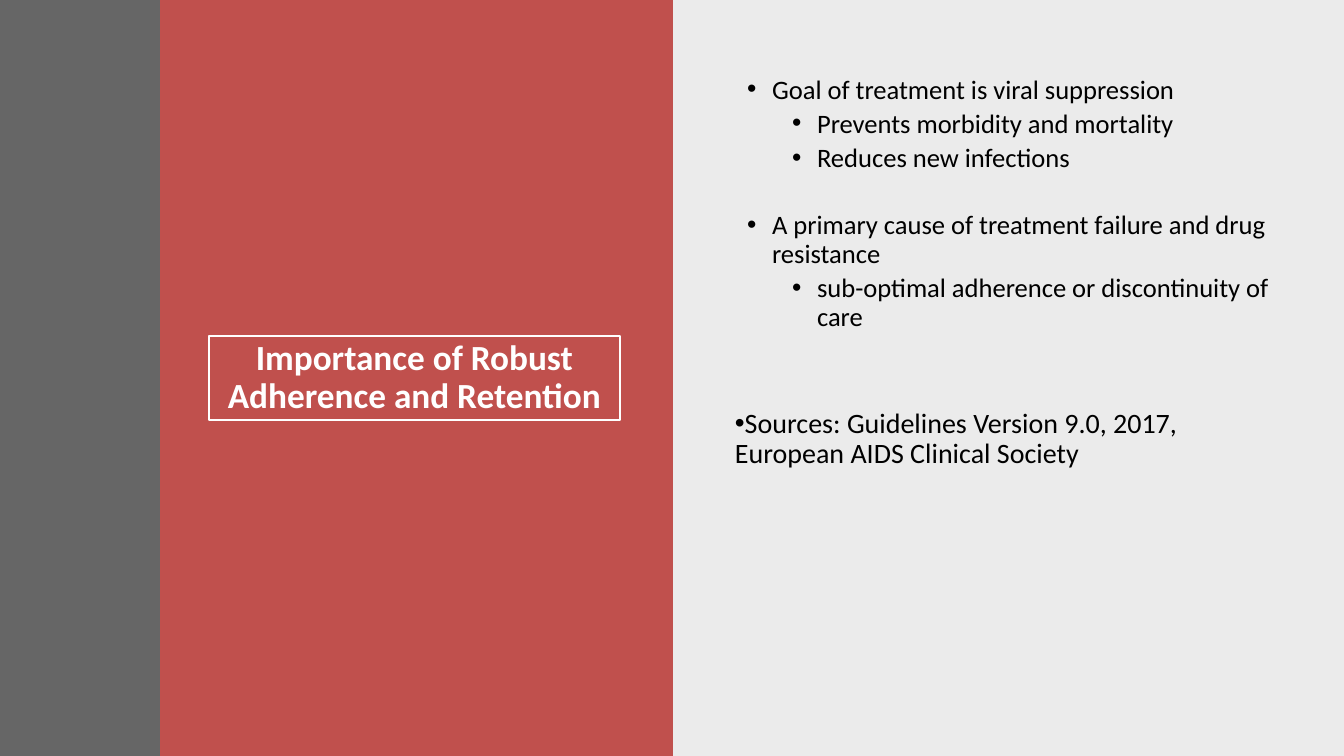
from lxml.etree import SubElement
from pptx import Presentation
from pptx.dml.color import RGBColor
from pptx.enum.shapes import MSO_SHAPE
from pptx.enum.text import MSO_ANCHOR, MSO_AUTO_SIZE, PP_ALIGN
from pptx.oxml.ns import qn
from pptx.util import Pt

PX = 9071.43  # EMU per px, at 100.8 px to the inch
WIDTH, HEIGHT = 1344, 756
BLACK = RGBColor(0x00, 0x00, 0x00)
WHITE = RGBColor(0xFF, 0xFF, 0xFF)
RED = RGBColor(0xC0, 0x50, 0x4D)
CHARCOAL = RGBColor(0x40, 0x40, 0x40)


def px(length):
    return round(length * PX)


def write_bullet(paragraph, text, size, margin):
    """Fill a paragraph with black bulleted text, hanging by 25 px."""
    paragraph.text = text
    paragraph.line_spacing = 0.9
    for name, value in {"name": "Calibri", "size": Pt(size)}.items():
        setattr(paragraph.font, name, value)
    paragraph.font.color.rgb = BLACK
    properties = paragraph._p.get_or_add_pPr()
    properties.set("marL", str(px(margin)))
    properties.set("indent", str(px(-25)))
    for tag, key, value in (("a:buFont", "typeface", "Arial"), ("a:buChar", "char", "•")):
        bullet = SubElement(properties, qn(tag))
        bullet.set(key, value)
        # Bullet settings belong ahead of the default run properties
        properties.find(qn("a:defRPr")).addprevious(bullet)


presentation = Presentation()
presentation.slide_width, presentation.slide_height = px(WIDTH), px(HEIGHT)
slide = presentation.slides.add_slide(presentation.slide_layouts[1])
heading = slide.shapes.title
points = slide.placeholders[1]

# Full-height panels behind the text: left, width, colour, opacity in percent
panels = [
    (672, 672, BLACK, 8),
    (160, 513, RED, 100),
    (0, 160, CHARCOAL, 80),
]
for left, width, colour, opacity in panels:
    panel = slide.shapes.add_shape(MSO_SHAPE.RECTANGLE, px(left), 0, px(width), px(HEIGHT))
    panel.shadow.inherit = False
    panel.line.fill.background()
    panel.fill.solid()
    panel.fill.fore_color.rgb = colour
    if opacity < 100:
        solid_colour = panel._element.spPr.find(qn("a:solidFill"))[0]
        SubElement(solid_colour, qn("a:alpha")).set("val", str(opacity * 1000))
    heading._element.addprevious(panel._element)

sources = slide.shapes.add_textbox(0, 0, 0, 0)
places = [
    (heading, 209, 336, 411, 84, MSO_ANCHOR.MIDDLE),
    (points, 725, 71, 557, 281, MSO_ANCHOR.TOP),
    (sources, 725, 404, 557, 281, MSO_ANCHOR.TOP),
]
for part, left, top, width, height, anchor in places:
    box = {"left": left, "top": top, "width": width, "height": height}
    for name, value in box.items():
        setattr(part, name, px(value))
    frame = {"word_wrap": True, "auto_size": MSO_AUTO_SIZE.NONE, "vertical_anchor": anchor}
    for name, value in frame.items():
        setattr(part.text_frame, name, value)

heading.line.color.rgb = WHITE
heading.line.width = Pt(2)
heading.text = "Importance of Robust Adherence and Retention"
heading_line = heading.text_frame.paragraphs[0]
heading_line.alignment = PP_ALIGN.CENTER
heading_line.line_spacing = 0.9
for name, value in {"name": "Calibri", "size": Pt(25.2), "bold": True}.items():
    setattr(heading_line.font, name, value)
heading_line.font.color.rgb = WHITE

# Level, wording, and the extra space that opens a new group
adherence_points = [
    (0, "Goal of treatment is viral suppression", None),
    (1, "Prevents morbidity and mortality", None),
    (1, "Reduces new infections", None),
    (0, "A primary cause of treatment failure and drug resistance", 39),
    (1, "sub-optimal adherence or discontinuity of care", None),
]
for index, (level, wording, gap) in enumerate(adherence_points):
    body = points.text_frame
    point = body.add_paragraph() if index else body.paragraphs[0]
    point.level = level
    if gap:
        point.space_before = px(gap)
    write_bullet(point, wording, 19, 37 + 45 * level)

citation = sources.text_frame.paragraphs[0]
citation.space_after = Pt(6)
write_bullet(citation, "Sources: Guidelines Version 9.0, 2017, European AIDS Clinical Society", 20, 0)

presentation.save("out.pptx")
